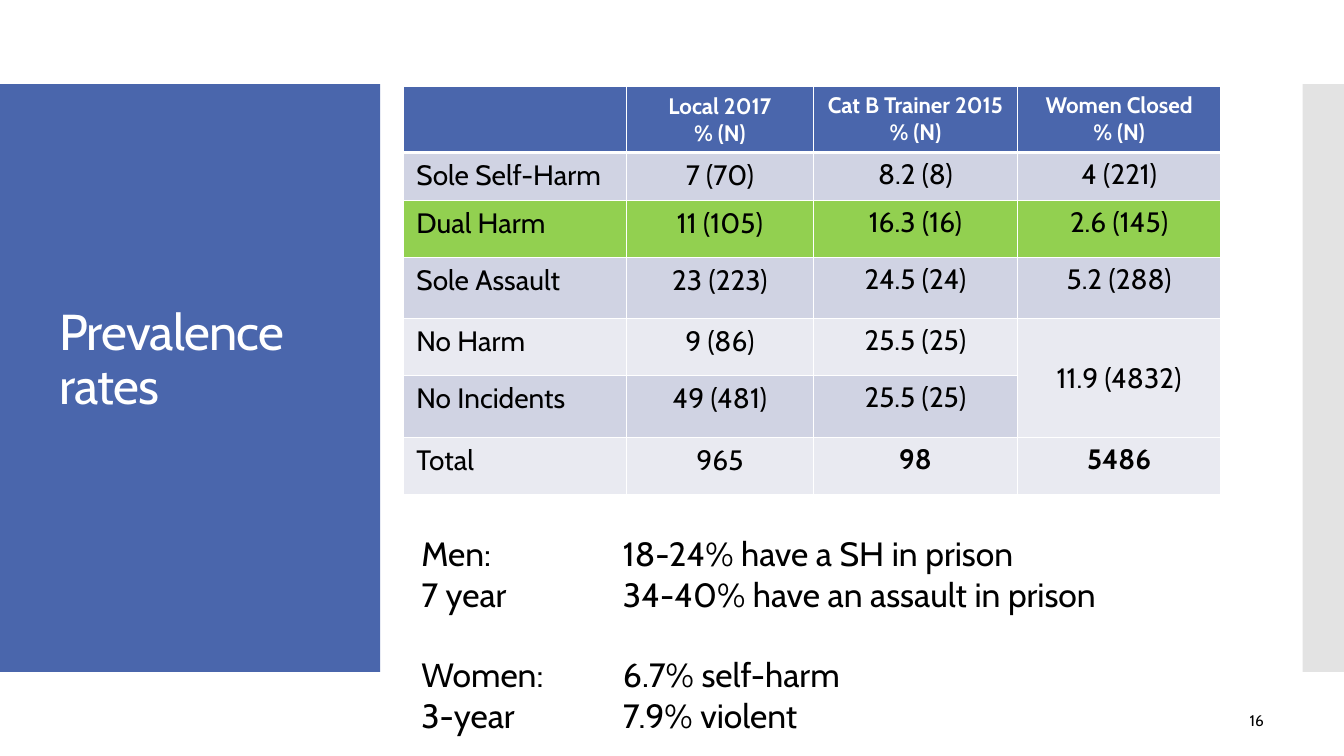
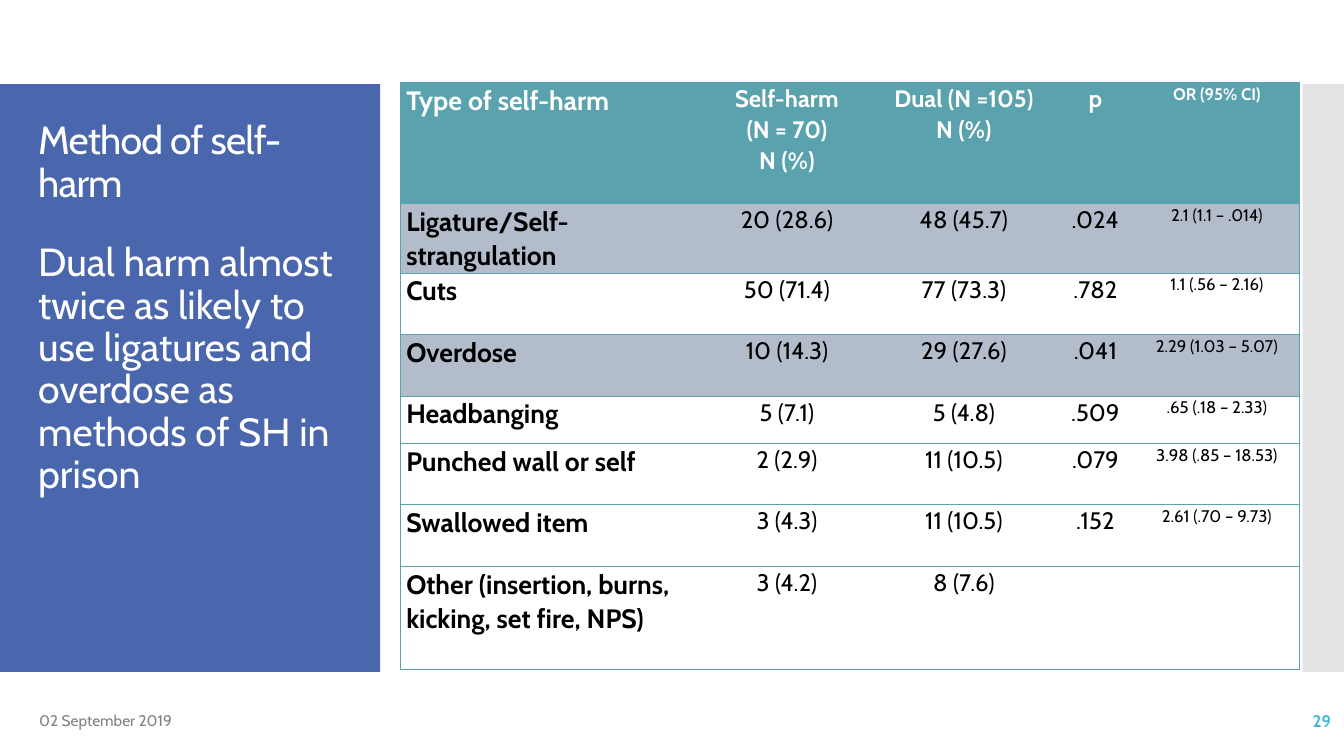
import dataclasses

import lxml.etree
import pptx
import pptx.dml.color
import pptx.enum.shapes
import pptx.enum.text
import pptx.oxml.ns
import pptx.util

Inches = pptx.util.Inches
ALIGN = pptx.enum.text.PP_ALIGN
ANCHOR = pptx.enum.text.MSO_ANCHOR


@dataclasses.dataclass(frozen=True)
class Theme:
    font: str = "Cabin"
    blue: str = "4A66AC"
    side_grey: str = "E3E3E3"
    white: str = "FFFFFF"
    black: str = "000000"
    band_dark: str = "D0D3E3"
    band_light: str = "E9EAF1"
    green: str = "92D050"
    teal: str = "5AA2AE"
    slate: str = "B2BCCB"
    date_grey: str = "808080"
    page_cyan: str = "40BAD2"
    title: int = 36
    subtitle: int = 28
    note: int = 24
    rate: int = 20
    rate_head: int = 16
    method: int = 19
    count: int = 17
    odds: int = 12
    footer: int = 11


THEME = Theme()
WIDTH, HEIGHT = 13.33, 7.5
BAND_TOP, BAND_HEIGHT = HEIGHT / 9, HEIGHT * 7 / 9
BANDS = [(0, 3.77, THEME.blue), (12.92, 0.41, THEME.side_grey)]
FOOTER_TOP, FOOTER_HEIGHT = 6.95, 0.4

PREVALENCE = [
    ("", "Local 2017\n% (N)", "Cat B Trainer 2015\n% (N)", "Women Closed\n% (N)"),
    ("Sole Self-Harm", "7 (70)", "8.2 (8)", "4 (221)"),
    ("Dual Harm", "11 (105)", "16.3 (16)", "2.6 (145)"),
    ("Sole Assault", "23 (223)", "24.5 (24)", "5.2 (288)"),
    ("No Harm", "9 (86)", "25.5 (25)", "11.9 (4832)"),
    ("No Incidents", "49 (481)", "25.5 (25)", ""),
    ("Total", "965", "98", "5486"),
]
PREVALENCE_WIDTHS = [2.21, 1.86, 2.02, 2.02]
PREVALENCE_HEIGHTS = [0.61, 0.48, 0.56, 0.61, 0.56, 0.62, 0.56]
MERGED_ROWS, MERGED_COLUMN = (4, 5), 3

FINDINGS = [
    "Men:\t18-24% have a SH in prison\n7 year\t34-40% have an assault in prison",
    "Women:\t6.7% self-harm\n3-year\t7.9% violent",
]

METHODS = [
    ("Type of self-harm", "Self-harm\n(N = 70)\nN (%)", "Dual (N =105)\nN (%)", "p", "OR (95% CI)"),
    ("Ligature/Self-strangulation", "20 (28.6)", "48 (45.7)", ".024", "2.1 (1.1 – .014)"),
    ("Cuts", "50 (71.4)", "77 (73.3)", ".782", "1.1 (.56 – 2.16)"),
    ("Overdose", "10 (14.3)", "29 (27.6)", ".041", "2.29 (1.03 – 5.07)"),
    ("Headbanging", "5 (7.1)", "5 (4.8)", ".509", ".65 (.18 – 2.33)"),
    ("Punched wall or self", "2 (2.9)", "11 (10.5)", ".079", "3.98 (.85 – 18.53)"),
    ("Swallowed item", "3 (4.3)", "11 (10.5)", ".152", "2.61 (.70 – 9.73)"),
    ("Other (insertion, burns, kicking, set fire, NPS)", "3 (4.2)", "8 (7.6)", "", ""),
]
METHOD_WIDTHS = [3, 1.67, 1.84, 0.77, 1.64]
METHOD_HEIGHTS = [1.2, 0.69, 0.61, 0.61, 0.47, 0.61, 0.61, 1.02]
SIGNIFICANT_ROWS = (1, 3)


def rgb(color):
    return pptx.dml.color.RGBColor.from_string(color)


def write(holder, text, size, color=THEME.black, bold=False, align=ALIGN.LEFT,
          anchor=ANCHOR.TOP, spacing=1.0, inset=(0.1, 0.05), tracking=0):
    """Put text, one paragraph a line, in a table cell or a text frame."""
    holder.margin_left = holder.margin_right = Inches(inset[0])
    holder.margin_top = holder.margin_bottom = Inches(inset[1])
    holder.vertical_anchor = anchor
    frame = getattr(holder, "text_frame", holder)
    for index, line in enumerate(text.split("\n")):
        paragraph = frame.add_paragraph() if index else frame.paragraphs[0]
        paragraph.alignment, paragraph.line_spacing = align, spacing
        if not line:
            continue
        run = paragraph.add_run()
        run.text = line
        run.font.name, run.font.size, run.font.bold = THEME.font, pptx.util.Pt(size), bold
        run.font.color.rgb = rgb(color)
        if tracking:
            run.font._element.set("spc", str(round(tracking * 100)))
    return frame


def add_text(slide, place, text, size, **text_format):
    frame = slide.shapes.add_textbox(*map(Inches, place)).text_frame
    frame.word_wrap = True
    return write(frame, text, size, **text_format)


def add_tab_stop(paragraph, inches):
    properties = paragraph._p.get_or_add_pPr()
    stops = lxml.etree.SubElement(properties, pptx.oxml.ns.qn("a:tabLst"))
    lxml.etree.SubElement(stops, pptx.oxml.ns.qn("a:tab"), pos=str(Inches(inches)), algn="l")


def set_borders(cell, borders):
    """Draw the sides L, R, T, B from (colour, points); None hides a side."""
    properties = cell._tc.get_or_add_tcPr()
    for side in "LRTB":
        line = lxml.etree.SubElement(properties, pptx.oxml.ns.qn("a:ln" + side))
        if borders[side] is None:
            lxml.etree.SubElement(line, pptx.oxml.ns.qn("a:noFill"))
            continue
        color, points = borders[side]
        line.set("w", str(pptx.util.Pt(points)))
        fill = lxml.etree.SubElement(line, pptx.oxml.ns.qn("a:solidFill"))
        lxml.etree.SubElement(fill, pptx.oxml.ns.qn("a:srgbClr"), val=color)


def add_grid(slide, left, top, rows, widths, heights, style):
    """Draw a table; style(row, column) gives fill, borders and text format."""
    table = slide.shapes.add_table(
        len(rows), len(widths), Inches(left), Inches(top),
        Inches(sum(widths)), Inches(sum(heights))).table
    for column, width in zip(table.columns, widths):
        column.width = Inches(width)
    for table_row, height in zip(table.rows, heights):
        table_row.height = Inches(height)
    for r, row in enumerate(rows):
        for c, text in enumerate(row):
            cell = table.cell(r, c)
            fill, borders, text_format = style(r, c)
            set_borders(cell, borders)
            if fill:
                cell.fill.solid()
                cell.fill.fore_color.rgb = rgb(fill)
            else:
                cell.fill.background()
            write(cell, text, **text_format)
    return table


def prevalence_style(r, c):
    thin, thick = (THEME.white, 1), (THEME.white, 3)
    borders = {"L": thin, "R": thin, "T": thick if r == 1 else thin, "B": thin if r else thick}
    header, total = r == 0, r == len(PREVALENCE) - 1
    if header:
        fill = THEME.blue
    elif PREVALENCE[r][0] == "Dual Harm":
        fill = THEME.green
    else:
        fill = THEME.band_dark if r % 2 else THEME.band_light
    merged = r in MERGED_ROWS and c == MERGED_COLUMN
    return fill, borders, dict(
        size=THEME.rate_head if header else THEME.rate,
        color=THEME.white if header else THEME.black,
        bold=header or (total and c > 1),
        align=ALIGN.CENTER if c else ALIGN.LEFT,
        anchor=ANCHOR.MIDDLE if merged else ANCHOR.TOP,
        inset=(0.13, 0.06) if c < 2 else (0.1, 0.05))


def method_style(r, c):
    rule, last = (THEME.teal, 0.75), len(METHOD_WIDTHS) - 1
    borders = {"L": None if c else rule, "R": rule if c == last else None, "T": rule, "B": rule}
    header = r == 0
    fill = THEME.teal if header else THEME.slate if r in SIGNIFICANT_ROWS else None
    return fill, borders, dict(
        size={0: THEME.method, last: THEME.odds}.get(c, THEME.count),
        color=THEME.white if header else THEME.black,
        bold=header or c == 0,
        align=ALIGN.CENTER if c else ALIGN.LEFT,
        spacing=1.07, inset=(0.06, 0))


def add_base(deck, title, title_place, title_size, title_anchor, page, **page_format):
    """Start a slide with the side bands, the title and the page number."""
    slide = deck.slides.add_slide(deck.slide_layouts[6])
    for left, width, color in BANDS:
        band = slide.shapes.add_shape(
            pptx.enum.shapes.MSO_SHAPE.RECTANGLE,
            *map(Inches, (left, BAND_TOP, width, BAND_HEIGHT)))
        band.shadow.inherit = False
        band.fill.solid()
        band.fill.fore_color.rgb = rgb(color)
        band.line.fill.background()
    add_text(slide, title_place, title, title_size, color=THEME.white,
             anchor=title_anchor, spacing=0.9, tracking=-0.6)
    add_text(slide, (11.63, FOOTER_TOP, 1.67, FOOTER_HEIGHT), page,
             anchor=ANCHOR.MIDDLE, **page_format)
    return slide


def add_prevalence(deck):
    slide = add_base(deck, "Prevalence rates", (0.49, 2.07, 2.9, 3.03), THEME.title,
                     ANCHOR.MIDDLE, "16", size=THEME.footer, align=ALIGN.CENTER)
    table = add_grid(slide, 4, 0.86, PREVALENCE, PREVALENCE_WIDTHS,
                     PREVALENCE_HEIGHTS, prevalence_style)
    first, last = (table.cell(r, MERGED_COLUMN) for r in MERGED_ROWS)
    first.merge(last)
    findings = add_text(slide, (4.08, 5.24, 8.48, 2.2), "\n".join(FINDINGS), THEME.note)
    for paragraph in findings.paragraphs:
        add_tab_stop(paragraph, 2)
    women = findings.paragraphs[FINDINGS[0].count("\n") + 1]
    women.space_before = pptx.util.Pt(29)


def add_methods(deck):
    slide = add_base(deck, "Method of self-harm", (0.28, 1.23, 3.41, 0.86), THEME.subtitle,
                     ANCHOR.BOTTOM, "29", size=THEME.odds, align=ALIGN.RIGHT,
                     color=THEME.page_cyan, bold=True)
    add_text(slide, (0.28, 2.36, 3.22, 4.09),
             "Dual harm almost twice as likely to use ligatures and overdose "
             "as methods of SH in prison",
             THEME.subtitle, color=THEME.white, spacing=0.9)
    add_text(slide, (0.29, FOOTER_TOP, 3, FOOTER_HEIGHT), "02 September 2019",
             THEME.footer, color=THEME.date_grey, anchor=ANCHOR.MIDDLE)
    add_grid(slide, 3.97, 0.82, METHODS, METHOD_WIDTHS, METHOD_HEIGHTS, method_style)


def main():
    deck = pptx.Presentation()
    deck.slide_width, deck.slide_height = Inches(WIDTH), Inches(HEIGHT)
    add_prevalence(deck)
    add_methods(deck)
    deck.save("out.pptx")


if __name__ == "__main__":
    main()
